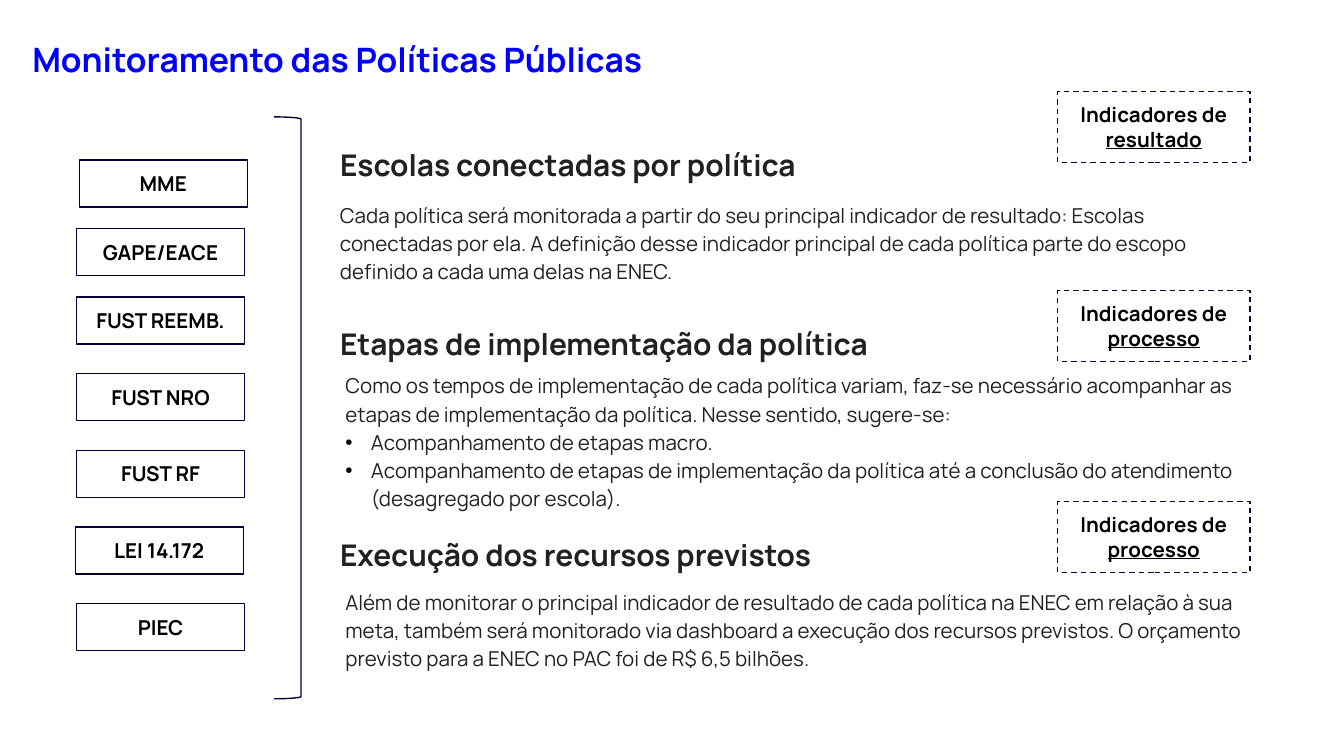
from lxml.etree import SubElement
from pptx import Presentation
from pptx.dml.color import RGBColor as RGB
from pptx.enum.dml import MSO_LINE_DASH_STYLE as Dash
from pptx.enum.shapes import MSO_SHAPE as Shape
from pptx.enum.text import MSO_ANCHOR as Anchor, MSO_AUTO_SIZE as AutoSize, PP_ALIGN as Align
from pptx.oxml.ns import qn
from pptx.util import Inches, Pt

# Content
TITLE = "Monitoramento das Políticas Públicas"
# Program, left edge
PROGRAMS = [
    ("MME", 0.59), ("GAPE/EACE", 0.57), ("FUST REEMB.", 0.57), ("FUST NRO", 0.57),
    ("FUST RF", 0.57), ("LEI 14.172", 0.56), ("PIEC", 0.57),
]
SECTIONS = [
    dict(heading="Escolas conectadas por política", top=1.05,
         indicator="resultado", tag_top=0.68, body_at=(2.53, 1.48, 6.84, 0.64),
         body="Cada política será monitorada a partir do seu principal indicador de "
              "resultado: Escolas conectadas por ela. A definição desse indicador principal "
              "de cada política parte do escopo definido a cada uma delas na ENEC.",
         bullets=[]),
    dict(heading="Etapas de implementação da política", top=2.38,
         indicator="processo", tag_top=2.16, body_at=(2.57, 2.75, 6.87, 1.06),
         body="Como os tempos de implementação de cada política variam, faz-se necessário "
              "acompanhar as etapas de implementação da política. Nesse sentido, sugere-se:",
         bullets=["Acompanhamento de etapas macro.",
                  "Acompanhamento de etapas de implementação da política até a conclusão "
                  "do atendimento (desagregado por escola)."]),
    dict(heading="Execução dos recursos previstos", top=3.95,
         indicator="processo", tag_top=3.73, body_at=(2.57, 4.36, 6.87, 0.64),
         body="Além de monitorar o principal indicador de resultado de cada política na ENEC "
              "em relação à sua meta, também será monitorado via dashboard a execução dos "
              "recursos previstos. O orçamento previsto para a ENEC no PAC foi de "
              "R$ 6,5 bilhões.",
         bullets=[]),
]

# Theme
THEME = dict(
    font="Manrope", white=RGB(255, 255, 255), outline=RGB(0x05, 0x00, 0x3A), line=Pt(0.75),
    title=dict(size=Pt(18), bold=True, color=RGB(0, 0, 255)),
    heading=dict(size=Pt(16), bold=True, color=RGB(0x21, 0x21, 0x21)),
    body=dict(size=Pt(11), bold=False, color=RGB(0x21, 0x21, 0x21)),
    label=dict(size=Pt(11), bold=True, color=RGB(0, 0, 0)),
)

# Layout, in inches; the slide is 16:9
SLIDE_W = 10
SLIDE_H = SLIDE_W * 9 / 16
TITLE_AT = (0.17, 0.22, 9.26, 0.45)
BRACKET_AT = (2.04, 0.87, 0.2, 4.33)
BOX_TOP, BOX_W, BOX_H = 1.19, 1.25, 0.35
NEAR_STEP, FAR_STEP, NEAR_COUNT = 0.51, 0.57, 2
HEADING_X, HEADING_W, HEADING_H = 2.53, 5.95, 0.31
TAG_X, TAG_W, TAG_H = 7.87, 1.43, 0.53
INDENT = 0.19


def inches(box):
    return [Inches(length) for length in box]


def place(holder, box):
    holder.left, holder.top, holder.width, holder.height = inches(box)


def set_frame(frame, inset, anchor):
    settings = dict(word_wrap=True, auto_size=AutoSize.NONE, vertical_anchor=anchor)
    for side in ("left", "top", "right", "bottom"):
        settings[f"margin_{side}"] = Inches(inset)
    for name, value in settings.items():
        setattr(frame, name, value)


def add_run(paragraph, text, style, underline=None):
    run = paragraph.add_run()
    run.text = text
    font = run.font
    settings = dict(name=THEME["font"], size=style["size"], bold=style["bold"],
                    underline=underline)
    for name, value in settings.items():
        setattr(font, name, value)
    font.color.rgb = style["color"]


def set_paragraph(paragraph, align=Align.LEFT, spacing=1.0):
    settings = dict(alignment=align, line_spacing=spacing, space_before=Pt(0),
                    space_after=Pt(0))
    for name, value in settings.items():
        setattr(paragraph, name, value)


def set_bullet(paragraph, bulleted):
    props = paragraph._p.get_or_add_pPr()
    indent = Inches(INDENT) if bulleted else 0
    props.set("marL", str(indent))
    props.set("indent", str(-indent))
    if bulleted:
        color = SubElement(props, qn("a:buClr"))
        SubElement(color, qn("a:srgbClr"), val=str(THEME["label"]["color"]))
        SubElement(props, qn("a:buFont"), typeface="Arial")
        SubElement(props, qn("a:buChar"), char="•")
    else:
        SubElement(props, qn("a:buNone"))


def write_lines(holder, lines, style):
    """Write (text, bulleted) lines at the left, from the top."""
    frame = holder.text_frame
    set_frame(frame, 0, Anchor.TOP)
    for number, (text, bulleted) in enumerate(lines):
        paragraph = frame.add_paragraph() if number else frame.paragraphs[0]
        set_paragraph(paragraph, spacing=1.15)
        set_bullet(paragraph, bulleted)
        add_run(paragraph, text, style)


def add_outline(shapes, kind, box):
    outline = shapes.add_shape(kind, *inches(box))
    outline.shadow.inherit = False
    outline.line.color.rgb = THEME["outline"]
    outline.line.width = THEME["line"]
    return outline


def add_label(shapes, box, text, underlined=None):
    label = add_outline(shapes, Shape.RECTANGLE, box)
    label.fill.solid()
    label.fill.fore_color.rgb = THEME["white"]
    set_frame(label.text_frame, 0.04, Anchor.MIDDLE)
    paragraph = label.text_frame.paragraphs[0]
    set_paragraph(paragraph, Align.CENTER)
    add_run(paragraph, text, THEME["label"])
    if underlined:
        add_run(paragraph, underlined, THEME["label"], underline=True)
    return label


def main():
    deck = Presentation()
    deck.slide_width, deck.slide_height = inches((SLIDE_W, SLIDE_H))
    slide = deck.slides.add_slide(deck.slide_layouts[1])
    shapes = slide.shapes

    # Title
    title = shapes.title
    place(title, TITLE_AT)
    set_frame(title.text_frame, 0.07, Anchor.TOP)
    set_paragraph(title.text_frame.paragraphs[0])
    add_run(title.text_frame.paragraphs[0], TITLE, THEME["title"])

    # Programs, gathered by the bracket
    bracket = add_outline(shapes, Shape.RIGHT_BRACKET, BRACKET_AT)
    bracket.fill.background()
    bracket.adjustments[0] = 0.083
    for row, (program, left) in enumerate(PROGRAMS):
        near = min(row, NEAR_COUNT)
        top = BOX_TOP + near * NEAR_STEP + (row - near) * FAR_STEP
        add_label(shapes, (left, top, BOX_W, BOX_H), program)

    # Sections: heading, text and indicator tag
    for section in SECTIONS:
        heading = shapes.add_textbox(
            *inches((HEADING_X, section["top"], HEADING_W, HEADING_H)))
        write_lines(heading, [(section["heading"], False)], THEME["heading"])
        if section["bullets"]:
            body = slide.placeholders[1]
            place(body, section["body_at"])
        else:
            body = shapes.add_textbox(*inches(section["body_at"]))
        lines = [(section["body"], False)] + [(item, True) for item in section["bullets"]]
        write_lines(body, lines, THEME["body"])
        tag = add_label(shapes, (TAG_X, section["tag_top"], TAG_W, TAG_H),
                        "Indicadores de ", section["indicator"])
        tag.line.dash_style = Dash.DASH

    deck.save("out.pptx")


if __name__ == "__main__":
    main()
